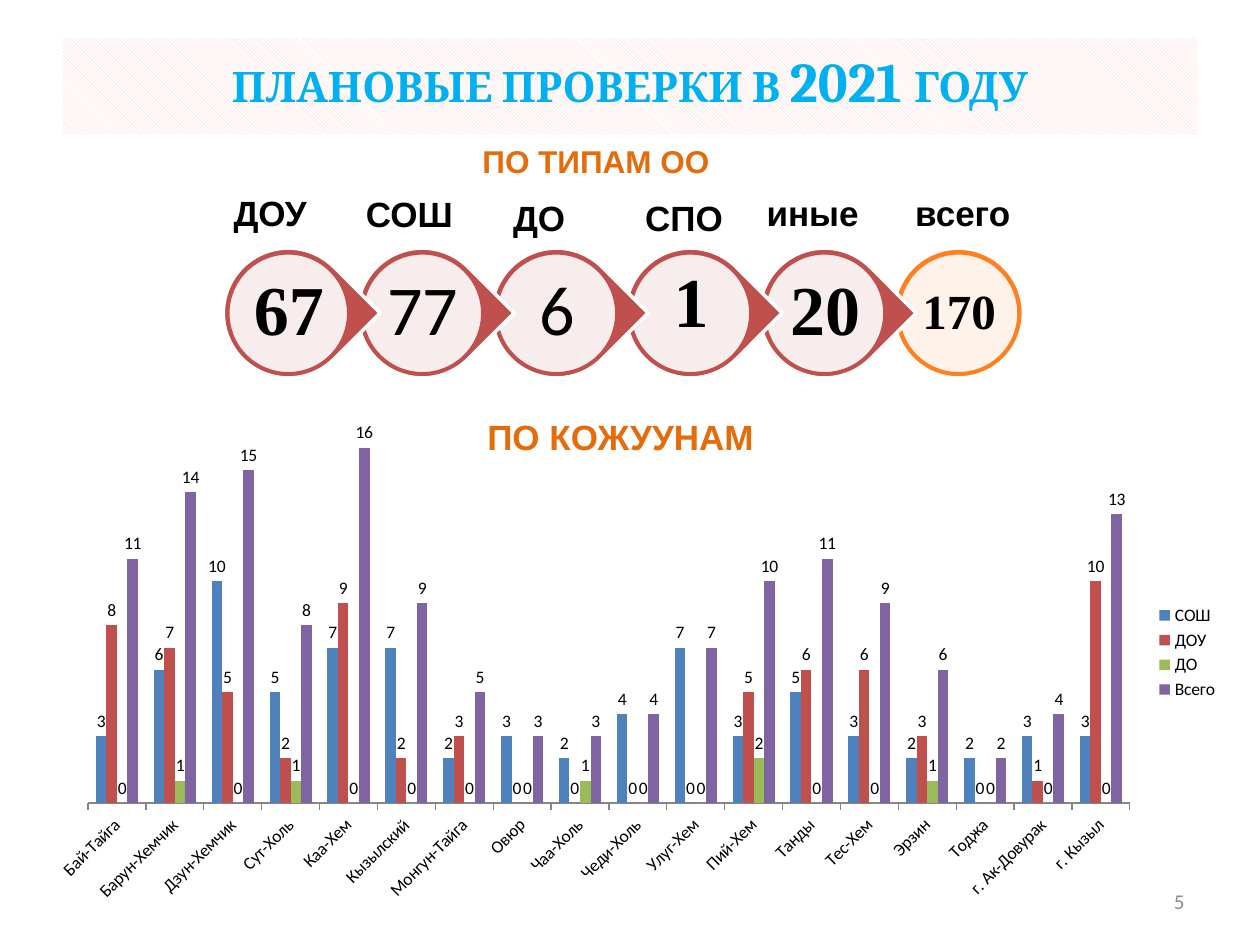
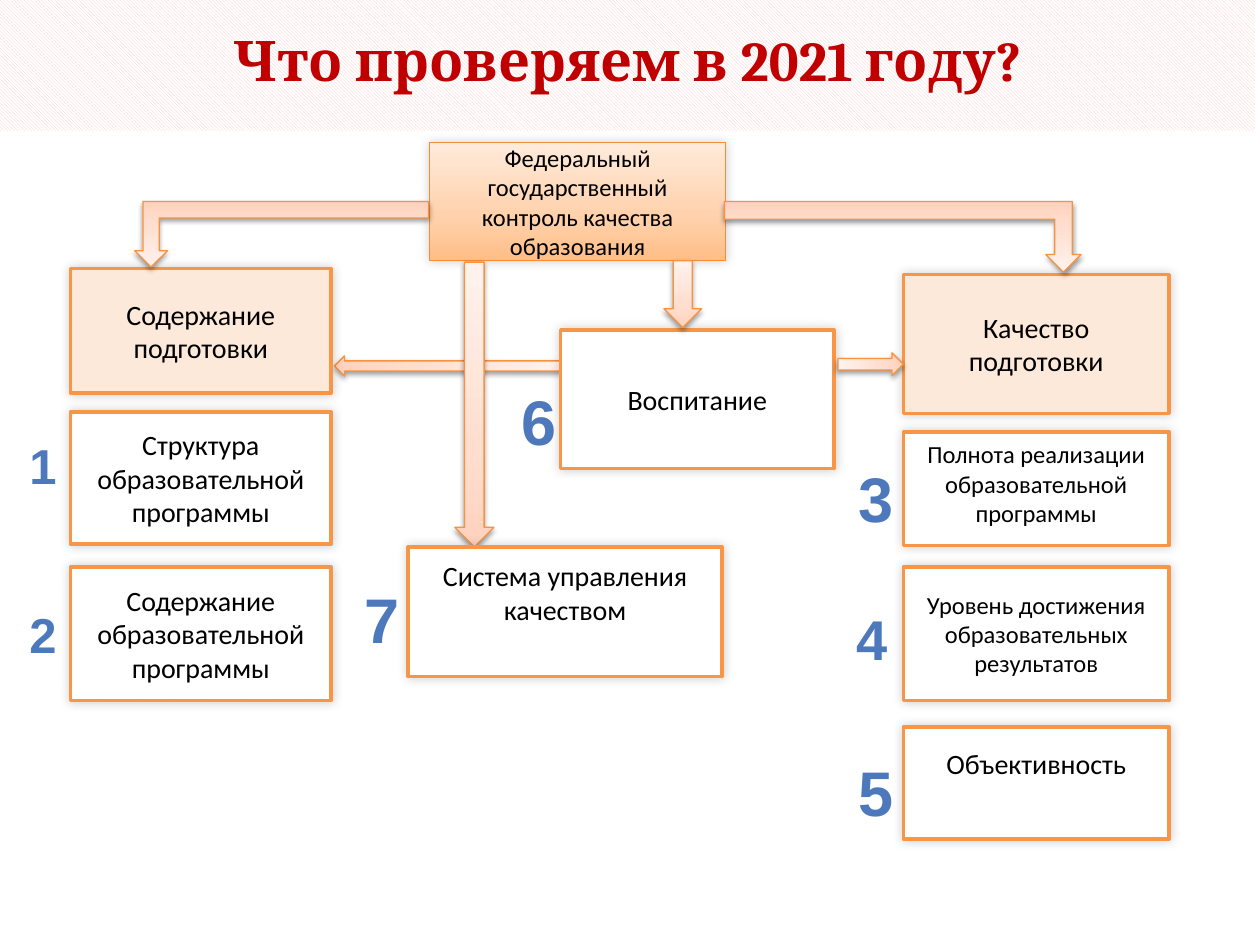
import pptx
import pptx.chart.data
import pptx.dml.color
import pptx.enum.chart
import pptx.enum.dml
import pptx.enum.shapes
import pptx.enum.text
import pptx.oxml
import pptx.shapes.autoshape
import pptx.slide
import pptx.util
from dataclasses import dataclass

Pt = pptx.util.Pt
Shapes = pptx.enum.shapes.MSO_SHAPE
Align = pptx.enum.text.PP_ALIGN
Shape = pptx.shapes.autoshape.Shape
Slide = pptx.slide.Slide

DRAWING_NS = "http://schemas.openxmlformats.org/drawingml/2006/main"
BLACK, WHITE = "000000", "FFFFFF"
RED, ORANGE, HEADING_ORANGE = "C0504D", "FF8021", "E46C0A"
BOX_LINE, BOX_TINT = "F79646", "FDE9D9"
ARROW_STOPS = ((0, "FFD2BD"), (35, "FFDED0"), (100, "FFF2ED"))
HEAD_STOPS = ((0, "FFBE86"), (35, "FFD0AA"), (100, "FFEBDB"))
DIGIT_STOPS = ((0, "7494C9"), (49, "4D79BC"), (50, "346AAA"), (92, "325F94"), (100, "315D91"))


@dataclass(frozen=True)
class Area:
    left: float
    top: float
    width: float
    height: float


@dataclass(frozen=True)
class Run:
    text: str
    size: float
    font: str = "Calibri"
    color: str = BLACK
    bold: bool = False


@dataclass(frozen=True)
class Shadow:
    alpha: int
    blur: float
    distance: float
    angle: int


@dataclass(frozen=True)
class Link:
    area: Area
    kind: Shapes = Shapes.DOWN_ARROW
    rotation: int = 0
    flipped: bool = False


@dataclass(frozen=True)
class Box:
    area: Area
    text: str
    size: int = 16
    fill: str = WHITE
    bottom_inset: float = 3.6


@dataclass(frozen=True)
class Bubble:
    value: str
    font: str = "Times New Roman"
    size: int = 40
    rise: float = 0


BOX_SHADOW = Shadow(20, 6, 0, 315)
ARROW_SHADOW = Shadow(38, 3.1, 1.6, 90)


def rgb(color: str) -> pptx.dml.color.RGBColor:
    return pptx.dml.color.RGBColor.from_string(color)


def gradient(stops: tuple, angle: int):
    marks = "".join(
        f'<a:gs pos="{position * 1000}"><a:srgbClr val="{color}"/></a:gs>'
        for position, color in stops
    )
    return pptx.oxml.parse_xml(
        f'<a:gradFill xmlns:a="{DRAWING_NS}" rotWithShape="1"><a:gsLst>{marks}</a:gsLst>'
        f'<a:lin ang="{angle * 60000}" scaled="0"/></a:gradFill>'
    )


def add_shape(slide: Slide, kind: Shapes, area: Area, fill: str | tuple | None = None,
              line: str | None = None, line_width: float = 2, shadow: Shadow | None = None) -> Shape:
    shape = slide.shapes.add_shape(
        kind, Pt(area.left), Pt(area.top), Pt(area.width), Pt(area.height))
    shape.shadow.inherit = False
    properties = shape.element.spPr
    if isinstance(fill, str):
        shape.fill.solid()
        shape.fill.fore_color.rgb = rgb(fill)
    else:
        shape.fill.background()
    if isinstance(fill, tuple):
        blank = properties.find(f"{{{DRAWING_NS}}}noFill")
        properties.replace(blank, gradient(fill, 270))
    if line:
        shape.line.color.rgb = rgb(line)
        shape.line.width = Pt(line_width)
    else:
        shape.line.fill.background()
    if shadow:
        effects = properties.find(f"{{{DRAWING_NS}}}effectLst")
        effects.append(pptx.oxml.parse_xml(
            f'<a:outerShdw xmlns:a="{DRAWING_NS}" blurRad="{Pt(shadow.blur)}" '
            f'dist="{Pt(shadow.distance)}" dir="{shadow.angle * 60000}" rotWithShape="0">'
            f'<a:srgbClr val="{BLACK}"><a:alpha val="{shadow.alpha * 1000}"/></a:srgbClr>'
            f'</a:outerShdw>'))
    return shape


def write(shape: Shape, runs: list[Run], align: Align = Align.CENTER, wrap: bool = True,
          spacing: float = 1.0, middle: bool = True) -> None:
    frame = shape.text_frame
    frame.word_wrap = wrap
    anchor = pptx.enum.text.MSO_ANCHOR
    frame.vertical_anchor = anchor.MIDDLE if middle else anchor.TOP
    paragraph = frame.paragraphs[0]
    paragraph.alignment = align
    paragraph.line_spacing = spacing
    for item in runs:
        run = paragraph.add_run()
        run.text = item.text
        run.font.size = Pt(item.size)
        run.font.name = item.font
        run.font.bold = item.bold
        run.font.color.rgb = rgb(item.color)


def add_label(slide: Slide, area: Area, run: Run, align: Align = Align.CENTER,
              wrap: bool = True) -> Shape:
    shape = slide.shapes.add_textbox(
        Pt(area.left), Pt(area.top), Pt(area.width), Pt(area.height))
    write(shape, [run], align, wrap, middle=False)
    shape.text_frame.auto_size = pptx.enum.text.MSO_AUTO_SIZE.SHAPE_TO_FIT_TEXT
    return shape


def add_title(slide: Slide, area: Area, runs: list[Run]) -> None:
    band = add_shape(slide, Shapes.RECTANGLE, area)
    band.fill.patterned()
    band.fill.pattern = pptx.enum.dml.MSO_PATTERN.LIGHT_DOWNWARD_DIAGONAL
    band.fill.fore_color.rgb = rgb("FCC9C8")
    band.fill.back_color.rgb = rgb(WHITE)
    write(band, runs, wrap=False, spacing=0.8)


def add_bubble(slide: Slide, bubble: Bubble, left: float, last: bool) -> None:
    color = ORANGE if last else RED
    back = add_shape(slide, Shapes.OVAL if last else Shapes.TEAR,
                     Area(left, 141.8, 74.2, 74.2), color, WHITE)
    back.rotation = 0 if last else 45
    disc = add_shape(slide, Shapes.OVAL, Area(left + 2.6, 144.5, 69.1, 69.1), WHITE, color)
    fill_color = disc.element.spPr.find(f".//{{{DRAWING_NS}}}srgbClr")
    fill_color.append(pptx.oxml.parse_xml(f'<a:alpha xmlns:a="{DRAWING_NS}" val="90000"/>'))
    number = slide.shapes.add_textbox(
        Pt(left + 12.6), Pt(154.1 - bubble.rise), Pt(49.7), Pt(49.7))
    frame = number.text_frame
    inset = Pt(2.9 if last else 4.3)
    frame.margin_left = frame.margin_top = frame.margin_right = frame.margin_bottom = inset
    write(number, [Run(bubble.value, bubble.size, bubble.font,
                       bold=bubble.font != "Calibri")], spacing=0.9)


def add_district_chart(slide: Slide) -> None:
    data = pptx.chart.data.CategoryChartData()
    data.categories = [
        "Бай-Тайга", "Барун-Хемчик", "Дзун-Хемчик", "Сут-Холь", "Каа-Хем", "Кызылский",
        "Монгун-Тайга", "Овюр", "Чаа-Холь", "Чеди-Холь", "Улуг-Хем", "Пий-Хем", "Танды",
        "Тес-Хем", "Эрзин", "Тоджа", "г. Ак-Довурак", "г. Кызыл"]
    data.add_series("СОШ", (3, 6, 10, 5, 7, 7, 2, 3, 2, 4, 7, 3, 5, 3, 2, 2, 3, 3))
    data.add_series("ДОУ", (8, 7, 5, 2, 9, 2, 3, 0, 0, 0, 0, 5, 6, 6, 3, 0, 1, 10))
    data.add_series("ДО", (0, 1, 0, 1, 0, 0, 0, 0, 1, 0, 0, 2, 0, 0, 1, 0, 0, 0))
    data.add_series("Всего", (11, 14, 15, 8, 16, 9, 5, 3, 3, 4, 7, 10, 11, 9, 6, 2, 4, 13))
    chart = slide.shapes.add_chart(
        pptx.enum.chart.XL_CHART_TYPE.COLUMN_CLUSTERED,
        Pt(20.2), Pt(224.6), Pt(683.3), Pt(296.6), data).chart
    chart.has_title = False
    chart.font.size = Pt(10)
    chart.font.name = "Calibri"
    chart.font.color.rgb = rgb(BLACK)
    chart.has_legend = True
    chart.legend.position = pptx.enum.chart.XL_LEGEND_POSITION.RIGHT
    chart.legend.include_in_layout = False
    chart.value_axis.visible = False
    chart.value_axis.has_major_gridlines = False
    chart.category_axis.major_tick_mark = pptx.enum.chart.XL_TICK_MARK.OUTSIDE
    chart.category_axis.format.line.color.rgb = rgb("868686")
    plot = chart.plots[0]
    plot.gap_width = 150
    plot.overlap = 0
    plot.vary_by_categories = False
    for series, color in zip(plot.series, ("4F81BD", RED, "9BBB59", "8064A2")):
        series.format.fill.solid()
        series.format.fill.fore_color.rgb = rgb(color)
        series.data_labels.show_value = True
        series.data_labels.position = pptx.enum.chart.XL_LABEL_POSITION.OUTSIDE_END


def add_box(slide: Slide, box: Box) -> None:
    shape = add_shape(slide, Shapes.RECTANGLE, box.area, box.fill, BOX_LINE, shadow=BOX_SHADOW)
    shape.text_frame.margin_bottom = Pt(box.bottom_inset)
    write(shape, [Run(box.text, box.size)])


def add_arrow(slide: Slide, link: Link) -> None:
    shape = add_shape(slide, link.kind, link.area, ARROW_STOPS, "F69240", 0.75, ARROW_SHADOW)
    shape.rotation = link.rotation
    if link.flipped:
        shape.element.spPr.xfrm.set("flipH", "1")


def add_digit(slide: Slide, text: str, area: Area, size: int) -> None:
    label = add_label(slide, area, Run(text, size, "Arial", bold=True), wrap=False)
    properties = label.text_frame.paragraphs[0].runs[0].font._element
    solid = properties.find(f"{{{DRAWING_NS}}}solidFill")
    properties.replace(solid, gradient(DIGIT_STOPS, 90))


def build_plan(slide: Slide) -> None:
    bubbles = [Bubble("67"), Bubble("77", "Calibri"), Bubble("6", "Calibri"),
               Bubble("1", rise=5), Bubble("20"), Bubble("170", size=28)]
    for index, bubble in reversed(list(enumerate(bubbles))):
        add_bubble(slide, bubble, 127.6 + 76.6 * index, index == len(bubbles) - 1)
    blue = "00B0F0"
    add_title(slide, Area(36, 21.6, 648, 55.4), [
        Run("ПЛАНОВЫЕ ПРОВЕРКИ В ", 24, "Cambria", blue, True),
        Run("2021 ", 32, "Cambria", blue, True),
        Run("ГОДУ", 24, "Cambria", blue, True)])
    page = slide.shapes.add_textbox(Pt(516), Pt(500.5), Pt(168), Pt(28.8))
    write(page, [Run("5", 12, color="8C8C8C")], Align.RIGHT)
    add_district_chart(slide)
    for text, left, top, width in (
            ("ДОУ", 123.1, 105.8, 62.6), ("СОШ", 197.3, 106.6, 73.4),
            ("ДО", 271.4, 108.7, 73.4), ("СПО", 354.2, 108.7, 73.4),
            ("иные", 427.7, 105.8, 73.4), ("всего", 507.6, 105.8, 85)):
        add_label(slide, Area(left, top, width, 31.5), Run(text, 20, "Arial", bold=True))
    for text, size, area in (("ПО ТИПАМ ОО", 18, Area(268.6, 77.8, 146.2, 29.1)),
                             ("ПО КОЖУУНАМ", 20, Area(271.4, 234, 168.5, 31.5))):
        add_label(slide, area, Run(text, size, "Arial", HEADING_ORANGE, True), Align.LEFT, False)


def build_scheme(slide: Slide) -> None:
    add_arrow(slide, Link(Area(249.8, 144.7, 11.5, 128.9), rotation=90))
    head = add_shape(slide, Shapes.RECTANGLE, Area(245.5, 81.4, 169.2, 67.7),
                     HEAD_STOPS, "F68C36", 0.75, BOX_SHADOW)
    write(head, [Run("Федеральный государственный контроль качества образования", 14)])
    left, left_width, right, right_width = 40.3, 149, 516.2, 151.9
    for box in (
            Box(Area(right, 157, right_width, 79.2), "Качество подготовки", fill=BOX_TINT),
            Box(Area(left, 153.4, left_width, 71.3), "Содержание подготовки", fill=BOX_TINT),
            Box(Area(320.4, 188.6, 156.2, 79.2), "Воспитание"),
            Box(Area(left, 235.4, left_width, 75.6), "Структура образовательной программы"),
            Box(Area(left, 324, left_width, 76.3), "Содержание образовательной программы"),
            Box(Area(right, 247, right_width, 64.8),
                "Полнота реализации образовательной программы", 14, bottom_inset=10),
            Box(Area(right, 324, right_width, 76.3),
                "Уровень достижения образовательных результатов", 14),
            Box(Area(right, 415.4, right_width, 64.1), "Объективность", bottom_inset=25.6)):
        add_box(slide, box)
    for link in (
            Link(Area(259.9, 149.8, 22.3, 162.7)),
            Link(Area(77, 115.2, 167.8, 37.4), Shapes.BENT_UP_ARROW, 180),
            Link(Area(414, 115.2, 203.8, 40.3), Shapes.BENT_UP_ARROW, 180, True),
            Link(Area(379.4, 149, 21.6, 38.2))):
        add_arrow(slide, link)
    add_box(slide, Box(Area(233.3, 312.5, 179.3, 74.2), "Система управления качеством",
                       bottom_inset=25.6))
    for text, x, y, width, height, size in (
            ("1", 9.4, 245.5, 30.2, 41, 28), ("2", 9.4, 342, 30.2, 41, 28),
            ("7", 200.9, 328.3, 34.6, 51.1, 36), ("3", 483.1, 259.2, 34.6, 51.1, 36),
            ("6", 290.9, 215.3, 34.6, 51.1, 36), ("4", 482.4, 342, 32.4, 46.1, 32),
            ("5", 483.1, 427, 34.6, 51.1, 36)):
        add_digit(slide, text, Area(x, y, width, height), size)
    add_arrow(slide, Link(Area(491, 189.4, 13, 37.4), rotation=270))
    add_title(slide, Area(0, 0, 717.1, 74.9),
              [Run("Что проверяем в 2021 году?", 32, "Cambria", "C00000", True)])


def main() -> None:
    presentation = pptx.Presentation()
    presentation.slide_width, presentation.slide_height = Pt(720), Pt(540)
    for build in (build_plan, build_scheme):
        build(presentation.slides.add_slide(presentation.slide_layouts[6]))
    presentation.save("out.pptx")


if __name__ == "__main__":
    main()
